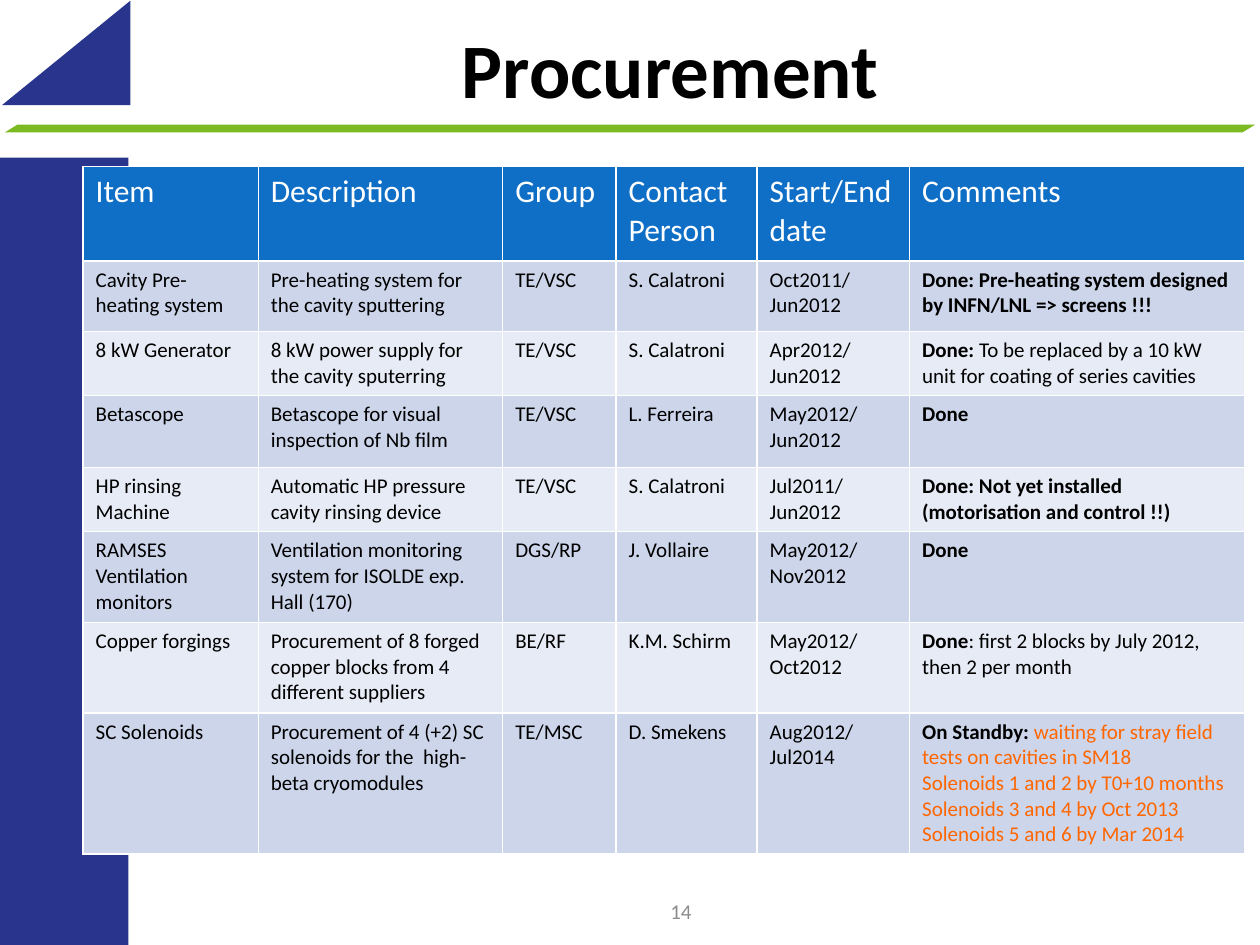
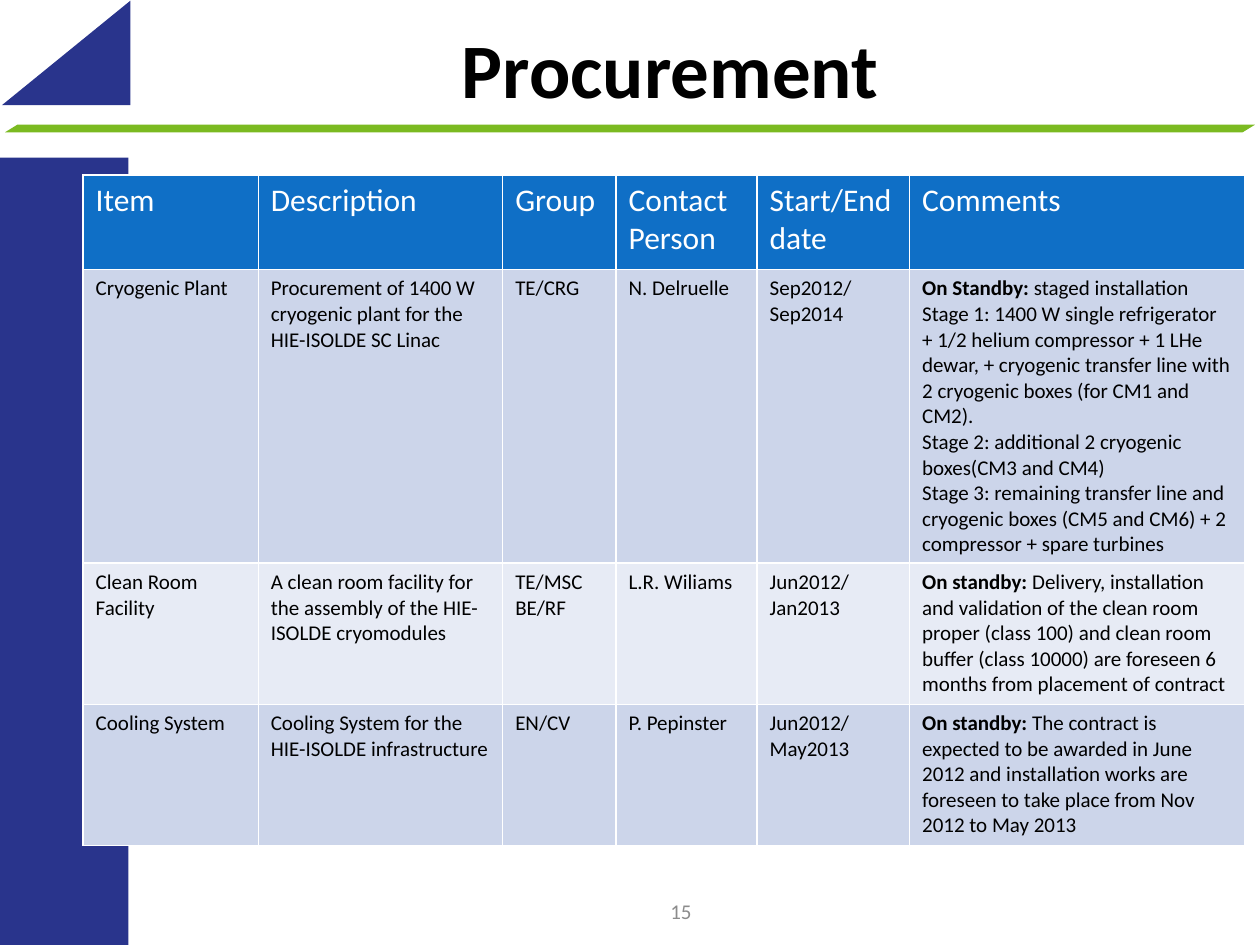
from lxml.etree import SubElement
from pptx import Presentation
from pptx.dml.color import RGBColor
from pptx.enum.shapes import MSO_SHAPE
from pptx.enum.text import MSO_ANCHOR, PP_ALIGN
from pptx.oxml.ns import qn
from pptx.util import Inches, Pt

WIDTH, HEIGHT = Inches(10), Inches(7.5)
FONT = "Calibri"
NAVY, GREEN, BLUE = "29348C", "7BBA21", "0F6FC6"
BLACK, WHITE, GREY, ORANGE = "000000", "FFFFFF", "8C8C8C", "FF6600"
BANDS = ["CCD5EA", "E7EBF5"]

HEADERS = ["Item", "Description", "Group", "Contact Person", "Start/End date", "Comments"]
COLUMN_WIDTHS = [13.9, 19.4, 9, 11.2, 12.1, 26.6]
HEADER_HEIGHT = 10

EQUIPMENT = [
    (7.47, "Cavity Pre-heating system", "Pre-heating system for the cavity sputtering",
     "TE/VSC", "S. Calatroni", "Oct2011/Jun2012",
     [[("Done: Pre-heating system designed by INFN/LNL => screens !!!", True, BLACK)]]),
    (6.8, "8 kW Generator", "8 kW power supply for the cavity sputerring",
     "TE/VSC", "S. Calatroni", "Apr2012/Jun2012",
     [[("Done: ", True, BLACK),
       ("To be replaced by a 10 kW unit for coating of series cavities", False, BLACK)]]),
    (7.6, "Betascope", "Betascope for visual inspection of Nb film",
     "TE/VSC", "L. Ferreira", "May2012/Jun2012", [[("Done", True, BLACK)]]),
    (6.8, "HP rinsing Machine", "Automatic HP pressure cavity rinsing device",
     "TE/VSC", "S. Calatroni", "Jul2011/Jun2012",
     [[("Done: Not yet installed (motorisation and control !!)", True, BLACK)]]),
    (9.6, "RAMSES Ventilation monitors",
     "Ventilation monitoring system for ISOLDE exp. Hall (170)",
     "DGS/RP", "J. Vollaire", "May2012/Nov2012", [[("Done", True, BLACK)]]),
    (9.6, "Copper forgings", "Procurement of 8 forged copper blocks from 4 different suppliers",
     "BE/RF", "K.M. Schirm", "May2012/Oct2012",
     [[("Done", True, BLACK),
       (": first 2 blocks by July 2012, then 2 per month", False, BLACK)]]),
    (14.93, "SC Solenoids", "Procurement of 4 (+2) SC solenoids for the  high-beta cryomodules",
     "TE/MSC", "D. Smekens", "Aug2012/Jul2014",
     [[("On Standby: ", True, BLACK),
       ("waiting for stray field tests on cavities in SM18", False, ORANGE)],
      [("Solenoids 1 and 2 by T0+10 months", False, ORANGE)],
      [("Solenoids 3 and 4 by Oct 2013", False, ORANGE)],
      [("Solenoids 5 and 6 by Mar 2014", False, ORANGE)]]),
]

INFRASTRUCTURE = [
    (31.07, "Cryogenic Plant", "Procurement of 1400 W cryogenic plant for the HIE-ISOLDE SC Linac",
     "TE/CRG", "N. Delruelle", "Sep2012/Sep2014",
     [[("On Standby:", True, BLACK), (" staged installation", False, BLACK)],
      [("Stage 1: 1400 W single refrigerator + 1/2 helium compressor + 1 LHe dewar, "
        "+ cryogenic transfer line with 2 cryogenic boxes (for CM1 and CM2).", False, BLACK)],
      [("Stage 2: additional 2 cryogenic boxes(CM3 and CM4)", False, BLACK)],
      [("Stage 3: remaining transfer line and cryogenic boxes (CM5 and CM6) "
        "+ 2 compressor + spare turbines", False, BLACK)]]),
    (14.93, "Clean Room Facility",
     "A clean room facility for the assembly of the HIE-ISOLDE cryomodules",
     "TE/MSC BE/RF", "L.R. Wiliams", "Jun2012/Jan2013",
     [[("On standby: ", True, BLACK),
       ("Delivery, installation and validation of the clean room proper (class 100) "
        "and clean room buffer (class 10000) are foreseen 6 months from placement "
        "of contract", False, BLACK)]]),
    (14.93, "Cooling System", "Cooling System for the HIE-ISOLDE infrastructure",
     "EN/CV", "P. Pepinster", "Jun2012/May2013",
     [[("On standby: ", True, BLACK),
       ("The contract is expected to be awarded in June 2012 and installation works "
        "are foreseen to take place from Nov 2012 to May 2013", False, BLACK)]]),
]


def rgb(color):
    """Turn a hex string into a colour."""
    return RGBColor.from_string(color)


def across(share):
    """Return a percentage of the slide's width."""
    return int(WIDTH * share / 100)


def down(share):
    """Return a percentage of the slide's height."""
    return int(HEIGHT * share / 100)


def box(left, top, width, height):
    """Turn percentages of the slide into a position and size."""
    return across(left), down(top), across(width), down(height)


def add_run(p, text, size, color, bold=False):
    """Append a formatted run to a paragraph."""
    r = p.add_run()
    r.text = text
    r.font.name, r.font.size, r.font.bold = FONT, Pt(size), bold
    r.font.color.rgb = rgb(color)


def add_block(s, kind, place, color):
    """Add a plain filled shape."""
    sp = s.shapes.add_shape(kind, *box(*place))
    sp.shadow.inherit = False
    sp.fill.solid()
    sp.fill.fore_color.rgb = rgb(color)
    sp.line.fill.background()
    return sp


def add_label(s, place, text, size, color, bold=False):
    """Add one centred line of text."""
    tf = s.shapes.add_textbox(*box(*place)).text_frame
    tf.word_wrap = True
    tf.vertical_anchor = MSO_ANCHOR.MIDDLE
    p = tf.paragraphs[0]
    p.alignment = PP_ALIGN.CENTER
    add_run(p, text, size, color, bold)


def add_frame(s, number):
    """Draw the side band, corner, rule, title and slide number."""
    add_block(s, MSO_SHAPE.RECTANGLE, (0, 16.67, 10.2, 83.33), NAVY)
    corner = add_block(s, MSO_SHAPE.RIGHT_TRIANGLE, (1.1, -1.2, 8.3, 13.6), NAVY)
    corner.rotation = 270
    rule = add_block(s, MSO_SHAPE.PARALLELOGRAM, (0.4, 13.2, 99.2, 0.8), GREEN)
    rule.adjustments[0] = 1.63
    add_label(s, (11.4, 0, 83.6, 14.27), "Procurement", 44, BLACK, True)
    add_label(s, (42.4, 93.73, 23.3, 5.33), str(number), 12, GREY)


def set_borders(cell):
    """Give a cell thin white edges."""
    tcPr = cell._tc.get_or_add_tcPr()
    for side in ("a:lnL", "a:lnR", "a:lnT", "a:lnB"):
        ln = SubElement(tcPr, qn(side), w=str(Pt(1)))
        SubElement(SubElement(ln, qn("a:solidFill")), qn("a:srgbClr"), val=WHITE)


def fill_cell(cell, paragraphs, size, fill):
    """Write paragraphs of (text, bold, colour) runs into a cell."""
    set_borders(cell)
    cell.fill.solid()
    cell.fill.fore_color.rgb = rgb(fill)
    tf = cell.text_frame
    for i, runs in enumerate(paragraphs):
        p = tf.add_paragraph() if i else tf.paragraphs[0]
        for text, bold, color in runs:
            add_run(p, text, size, color, bold)


def add_procurement_table(s, top, items):
    """Add the header row and one banded row for each item."""
    heights = [HEADER_HEIGHT] + [item[0] for item in items]
    place = box(6.6, top, sum(COLUMN_WIDTHS), sum(heights))
    table = s.shapes.add_table(len(heights), len(HEADERS), *place).table
    for column, width in zip(table.columns, COLUMN_WIDTHS):
        column.width = across(width)
    for row, height in zip(table.rows, heights):
        row.height = down(height)
    for c, header in enumerate(HEADERS):
        fill_cell(table.cell(0, c), [[(header, False, WHITE)]], 18, BLUE)
    for i, (_, *texts, comments) in enumerate(items):
        cells = [[[(text, False, BLACK)]] for text in texts] + [comments]
        for c, paragraphs in enumerate(cells):
            fill_cell(table.cell(i + 1, c), paragraphs, 12, BANDS[i % 2])


def main():
    """Build both procurement slides."""
    prs = Presentation()
    prs.slide_width, prs.slide_height = WIDTH, HEIGHT
    for number, top, items in [(14, 17.6, EQUIPMENT), (15, 18.53, INFRASTRUCTURE)]:
        s = prs.slides.add_slide(prs.slide_layouts[6])
        add_frame(s, number)
        add_procurement_table(s, top, items)
    prs.save("out.pptx")


if __name__ == "__main__":
    main()
